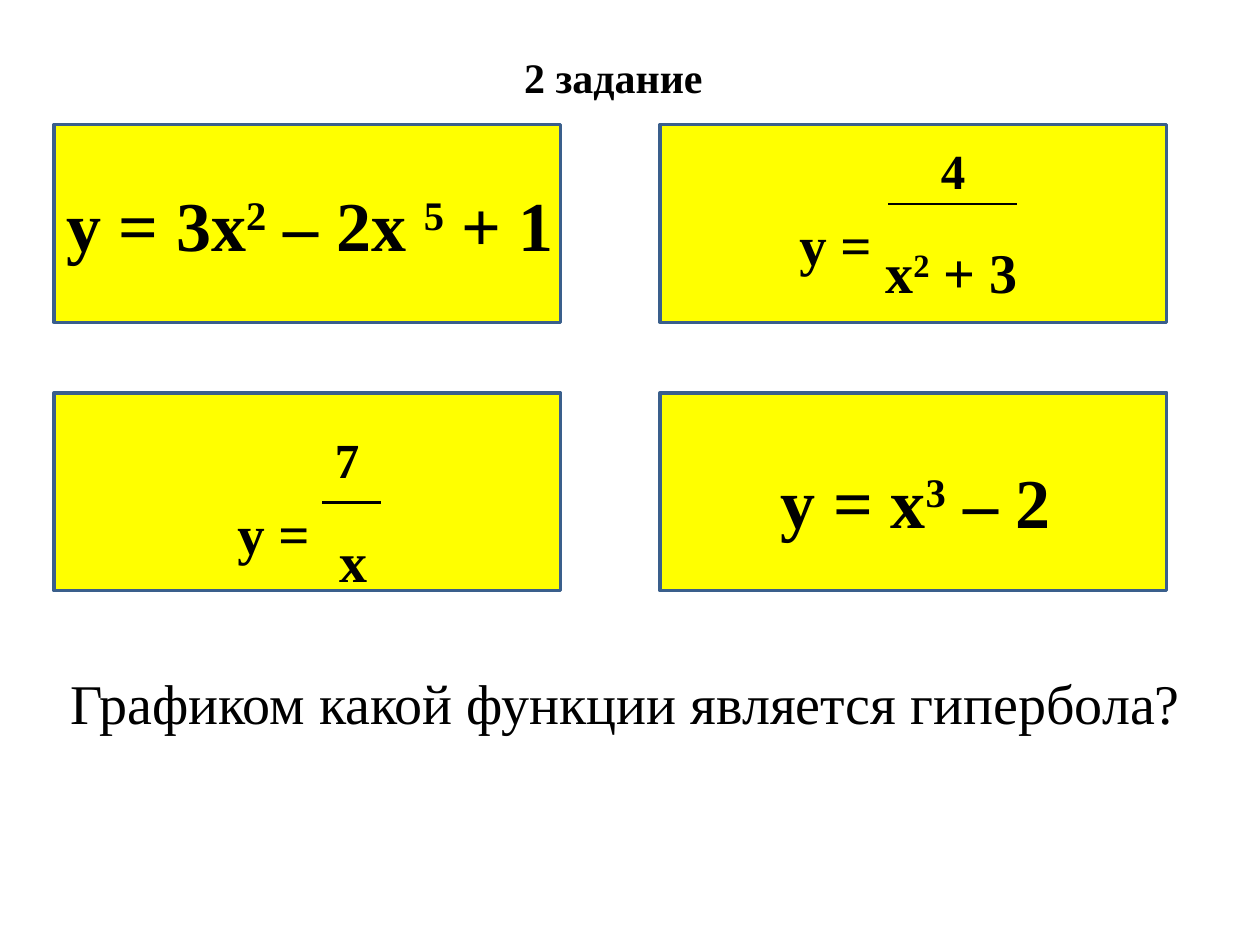
from lxml import etree
from pptx import Presentation
from pptx import util as u
from pptx.dml.color import RGBColor
from pptx.enum import shapes, text
from pptx.oxml.ns import qn

BLACK = RGBColor(0x00, 0x00, 0x00)
YELLOW = RGBColor(0xFF, 0xFF, 0x00)
BLUE = RGBColor(0x3A, 0x5F, 0x8C)

CARD_LEFT, CARD_TOP = 1.09, 2.51
CARD_WIDTH, CARD_HEIGHT = 10.21, 3.99
STEP_X, STEP_Y = 12.22, 5.41
NUMERATOR_INDENT = 5.41


def add_run(paragraph, wording, size, bold=True, raised=False, spacing=0):
    run = paragraph.add_run()
    run.text = wording
    run_format = {"name": "Times New Roman", "size": u.Pt(size), "bold": bold}
    for key, value in run_format.items():
        setattr(run.font, key, value)
    run.font.color.rgb = BLACK
    properties = run._r.get_or_add_rPr()
    if raised:
        properties.set("baseline", "30000")
    if spacing:
        properties.set("spc", str(spacing))


def add_text_area(slide, left, top, width, height, wrap=True):
    area = slide.shapes.add_textbox(*map(u.Cm, (left, top, width, height)))
    area.text_frame.word_wrap = wrap
    return area.text_frame


def place_title(slide, left, top, width, height):
    title = slide.shapes.title
    place = {"left": left, "top": top, "width": width, "height": height}
    for key, value in place.items():
        setattr(title, key, u.Cm(value))
    frame_format = {
        "word_wrap": False,
        "auto_size": text.MSO_AUTO_SIZE.NONE,
        "vertical_anchor": text.MSO_ANCHOR.TOP,
    }
    for key, value in frame_format.items():
        setattr(title.text_frame, key, value)
    heading = title.text_frame.paragraphs[0]
    heading.alignment = text.PP_ALIGN.LEFT
    add_run(heading, "2 задание", 24)


def place_card(slide, left, top):
    card = slide.shapes.add_shape(
        shapes.MSO_SHAPE.RECTANGLE,
        *map(u.Cm, (left, top, CARD_WIDTH, CARD_HEIGHT)))
    card.shadow.inherit = False
    card.fill.solid()
    card.fill.fore_color.rgb = YELLOW
    card.line.color.rgb = BLUE
    card.line.width = u.Pt(2)


def place_polynomial(slide, left, top, width, terms):
    formula = add_text_area(slide, left, top, width, 1.96, wrap=False).paragraphs[0]
    for index, term in enumerate(terms):
        add_run(formula, term, 40, raised=index % 2 == 1)


def place_fraction(slide, left, top, numerator, denominator, gap, bar):
    frame = add_text_area(slide, left, top, 10.01, 3)
    upper = frame.paragraphs[0]
    upper._p.get_or_add_pPr().set("marL", str(u.Cm(NUMERATOR_INDENT)))
    add_run(upper, numerator, 28)
    lower = frame.add_paragraph()
    lower.alignment = text.PP_ALIGN.CENTER
    add_run(lower, "у =", 54, raised=True)
    add_run(lower, " ", 54, raised=True, spacing=gap)
    for index, term in enumerate(denominator):
        add_run(lower, term, 32, raised=index % 2 == 1)

    bar_left, bar_top, bar_length = bar
    start, level = left + bar_left, top + bar_top
    fraction_bar = slide.shapes.add_connector(
        shapes.MSO_CONNECTOR.STRAIGHT,
        *map(u.Cm, (start, level, start + bar_length, level)))
    fraction_bar.line.color.rgb = BLACK
    fraction_bar.line.width = u.Pt(1.5)
    etree.SubElement(fraction_bar._element.spPr, qn("a:effectLst"))


def place_question(slide, left, top, width, height):
    frame = add_text_area(slide, left, top, width, height)
    frame.vertical_anchor = text.MSO_ANCHOR.MIDDLE
    question = frame.paragraphs[0]
    question.alignment = text.PP_ALIGN.CENTER
    add_run(question, "Графиком какой функции является гипербола?", 32, bold=False)


def main():
    deck = Presentation()
    deck.slide_width, deck.slide_height = u.Cm(25.4), u.Cm(19.05)
    slide = deck.slides.add_slide(deck.slide_layouts[5])

    place_title(slide, 10.31, 0.91, 4.14, 1.27)
    lefts = [CARD_LEFT, CARD_LEFT + STEP_X]
    tops = [CARD_TOP, CARD_TOP + STEP_Y]
    for top in tops:
        for left in lefts:
            place_card(slide, left, top)

    place_polynomial(slide, lefts[0], tops[0] + 1.02, 10.54,
                     ["у = 3х", "2", " – 2х ", "5", " + 1"])
    place_polynomial(slide, lefts[1] + 2.18, tops[1] + 1.19, 6.07,
                     ["у = х", "3", " – 2"])
    place_fraction(slide, lefts[1], tops[0] + 0.2, "4", ["х", "2", " + 3"],
                   0, (4.6, 1.4, 2.59))
    place_fraction(slide, lefts[0], tops[1] + 0.61, "7", ["х"],
                   900, (5.41, 1.6, 1.19))
    place_question(slide, 0.51, 13.34, 24.21, 1.63)

    deck.save("out.pptx")


if __name__ == "__main__":
    main()
